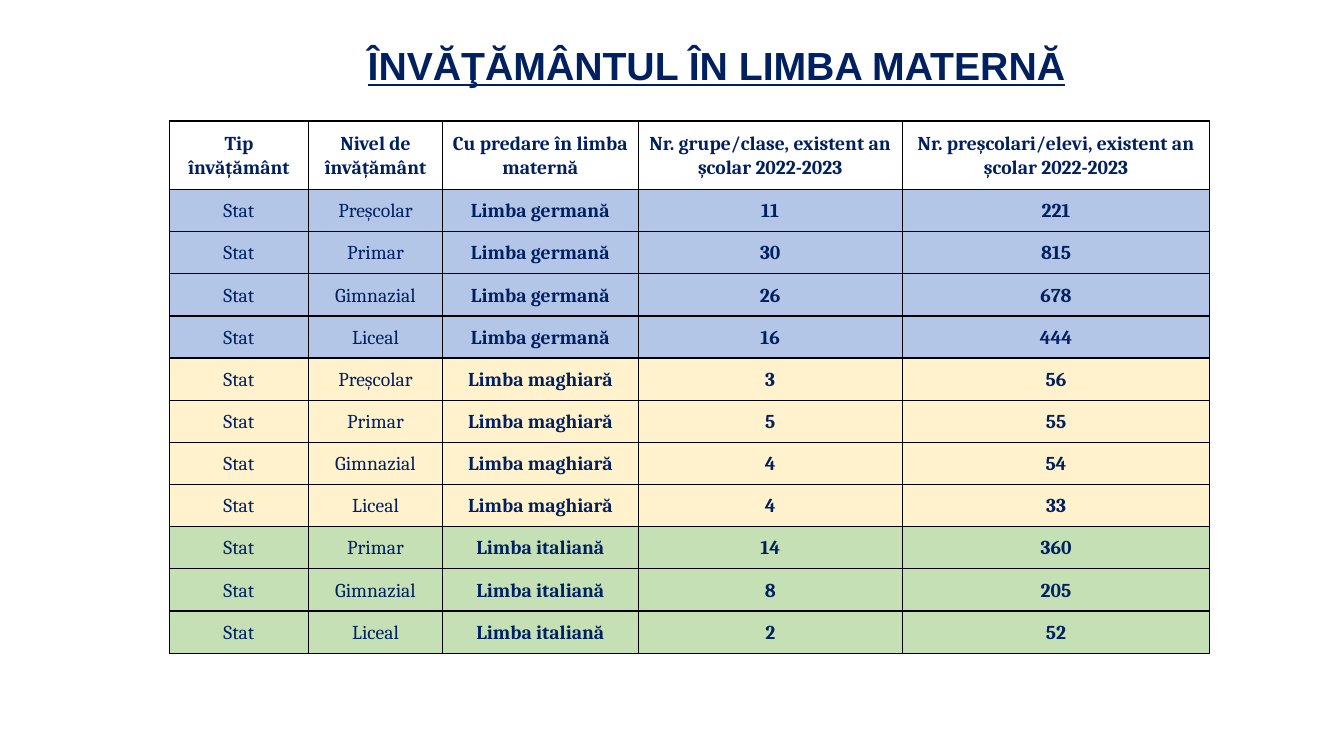
import pptx
import pptx.util
import pptx.dml.color
import pptx.enum.text
import pptx.oxml
import pptx.oxml.ns
from pptx.util import Inches

COLORS = {
    "navy": "002060",
    "outline": "0070C0",
    "border": "000000",
    "german": "B4C6E7",
    "hungarian": "FFF2CC",
    "italian": "C5E0B4",
}
HEADERS = [
    "Tip învățământ",
    "Nivel de învățământ",
    "Cu predare în limba maternă",
    "Nr. grupe/clase, existent an școlar 2022-2023",
    "Nr. preșcolari/elevi, existent an școlar 2022-2023",
]
COLUMN_WIDTHS = [1.38, 1.33, 1.94, 2.62, 3.05]
HEADER_HEIGHT, TABLE_HEIGHT = 0.68, 5.28
# Language, fill, and (level, classes, pupils) for each level
LANGUAGES = [
    ("Limba germană", "german", [("Preșcolar", 11, 221), ("Primar", 30, 815),
                                 ("Gimnazial", 26, 678), ("Liceal", 16, 444)]),
    ("Limba maghiară", "hungarian", [("Preșcolar", 3, 56), ("Primar", 5, 55),
                                     ("Gimnazial", 4, 54), ("Liceal", 4, 33)]),
    ("Limba italiană", "italian", [("Primar", 14, 360), ("Gimnazial", 8, 205),
                                   ("Liceal", 2, 52)]),
]


def line_xml(tag, width, color):
    """Return a solid line element; width is in points."""
    return pptx.oxml.parse_xml(
        f'<a:{tag} {pptx.oxml.ns.nsdecls("a")} w="{pptx.util.Pt(width)}">'
        f'<a:solidFill><a:srgbClr val="{COLORS[color]}"/></a:solidFill></a:{tag}>')


def style_text(paragraph, font_name, size, bold):
    paragraph.alignment = pptx.enum.text.PP_ALIGN.CENTER
    font = paragraph.runs[0].font
    font.name, font.size, font.bold = font_name, pptx.util.Pt(size), bold
    font.color.rgb = pptx.dml.color.RGBColor.from_string(COLORS["navy"])
    return font


presentation = pptx.Presentation()
presentation.slide_width = Inches(13.33)
presentation.slide_height = Inches(7.5)
slide = presentation.slides.add_slide(presentation.slide_layouts[6])

# Title
title = slide.shapes.add_textbox(
    Inches(1.2), Inches(0.36), Inches(11.81), Inches(0.57)).text_frame
title.word_wrap = True
title.auto_size = pptx.enum.text.MSO_AUTO_SIZE.SHAPE_TO_FIT_TEXT
title.text = "ÎNVĂŢĂMÂNTUL ÎN LIMBA MATERNĂ"
title_font = style_text(title.paragraphs[0], "Arial", 28, True)
title_font.underline = True
title.paragraphs[0].runs[0]._r.get_or_add_rPr().insert(0, line_xml("ln", 0.75, "outline"))

# Table contents
rows = [(HEADERS, None)]
for language, fill, levels in LANGUAGES:
    for level, classes, pupils in levels:
        rows.append((["Stat", level, language, str(classes), str(pupils)], fill))

# Table
table = slide.shapes.add_table(
    len(rows), len(HEADERS), Inches(1.68), Inches(1.2),
    Inches(sum(COLUMN_WIDTHS)), Inches(TABLE_HEIGHT)).table
table.horz_banding = False
for column, width in zip(table.columns, COLUMN_WIDTHS):
    column.width = Inches(width)

body_height = (TABLE_HEIGHT - HEADER_HEIGHT) / (len(rows) - 1)
for row_index, (texts, fill) in enumerate(rows):
    is_header = row_index == 0
    table.rows[row_index].height = Inches(HEADER_HEIGHT if is_header else body_height)
    for column_index, text in enumerate(texts):
        cell = table.cell(row_index, column_index)
        cell.vertical_anchor = pptx.enum.text.MSO_ANCHOR.MIDDLE
        cell.margin_left = cell.margin_right = Inches(0.07)
        cell.margin_top = cell.margin_bottom = 0
        for side in ("lnL", "lnR", "lnT", "lnB"):
            cell._tc.get_or_add_tcPr().append(line_xml(side, 1, "border"))
        if fill:
            cell.fill.solid()
            cell.fill.fore_color.rgb = pptx.dml.color.RGBColor.from_string(COLORS[fill])
        else:
            cell.fill.background()
        cell.text_frame.text = text
        paragraph = cell.text_frame.paragraphs[0]
        paragraph.line_spacing = 1.07
        paragraph.space_after = pptx.util.Pt(8)
        style_text(paragraph, "Cambria", 14, is_header or column_index >= 2)

presentation.save("out.pptx")
